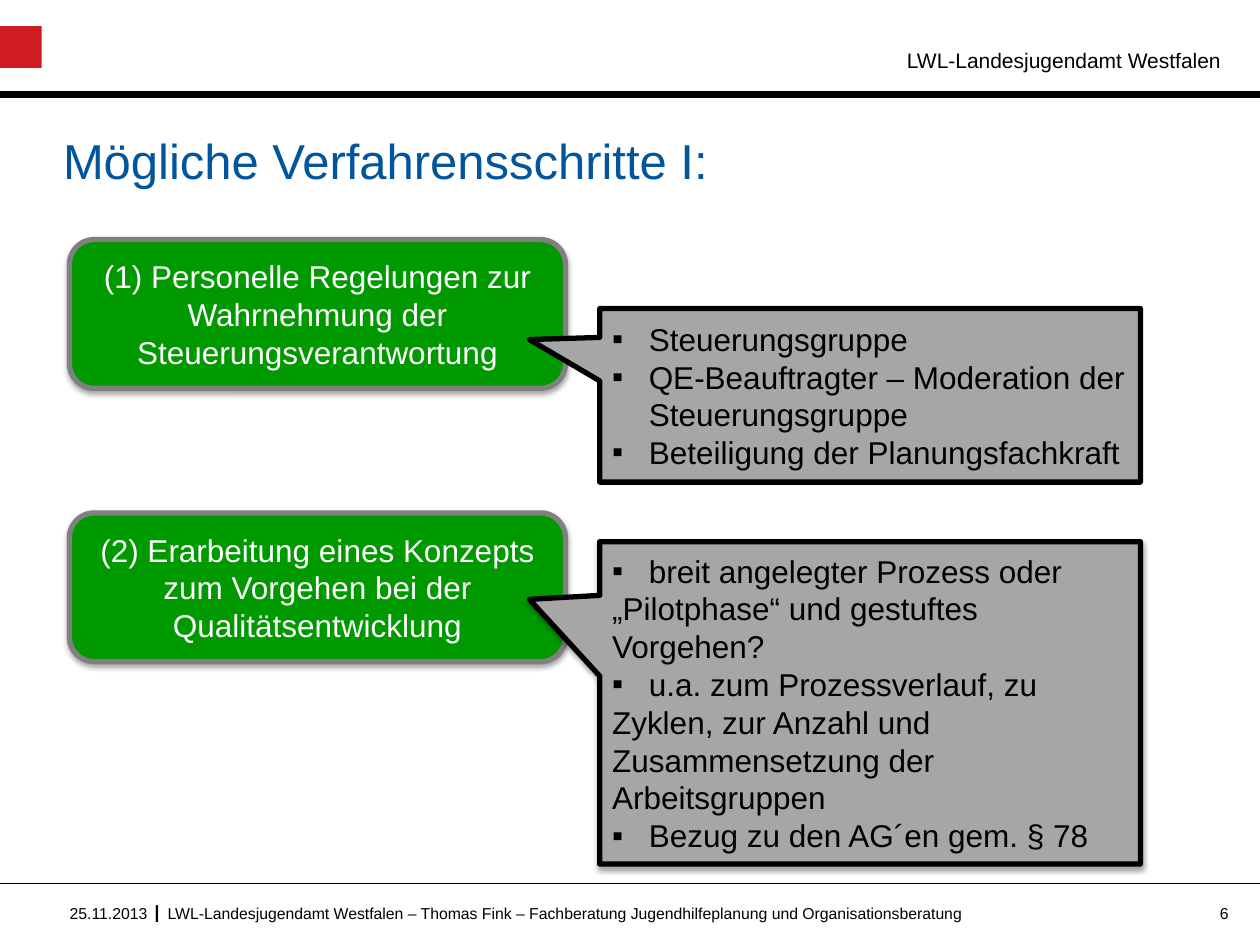
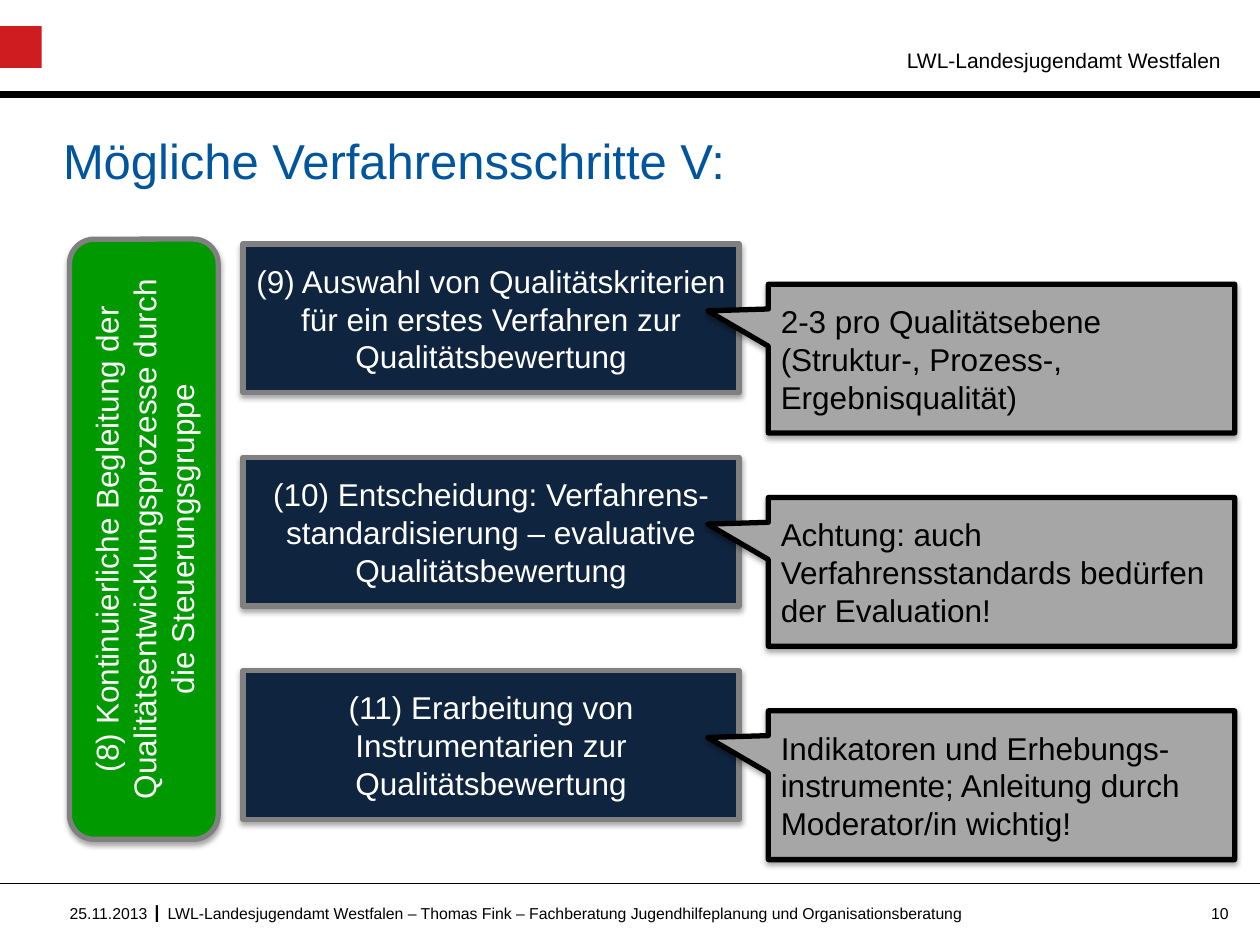
"""Build two slides on the possible steps of a quality development process."""
from lxml.etree import SubElement
from pptx import Presentation
from pptx.dml.color import RGBColor
from pptx.enum.shapes import MSO_CONNECTOR, MSO_SHAPE
from pptx.enum.text import MSO_ANCHOR, MSO_AUTO_SIZE, PP_ALIGN
from pptx.oxml.ns import qn
from pptx.util import Cm, Pt

FONT = "Arial"
BLACK, WHITE, RED, BLUE = "000000", "FFFFFF", "CF1C21", "00559D"
GREEN, NAVY, GREY, EDGE = "009900", "0F243E", "A6A6A6", "808080"
TAB = Cm(0.74)
STEP = 4.3
rgb = RGBColor.from_string


def write(sp, text, size=18, color=BLACK, align=PP_ALIGN.LEFT, anchor=MSO_ANCHOR.TOP,
          inset=None, spacing=None, bullet=False, hanging=False):
    """Fill a shape with one paragraph per line of text."""
    tf = sp.text_frame
    tf.word_wrap, tf.auto_size, tf.vertical_anchor = True, MSO_AUTO_SIZE.NONE, anchor
    if inset is not None:
        tf.margin_left = tf.margin_top = tf.margin_right = tf.margin_bottom = Cm(inset)
    for i, line in enumerate(text.split("\n")):
        p = tf.add_paragraph() if i else tf.paragraphs[0]
        if bullet:
            pPr = p._p.get_or_add_pPr()
            pPr.set("marL", str(TAB if hanging else 0))
            pPr.set("indent", str(-TAB if hanging else 0))
            SubElement(pPr, qn("a:buFont"), typeface=FONT)
            SubElement(pPr, qn("a:buChar"), char="▪")
            if not hanging:
                tabs = SubElement(pPr, qn("a:tabLst"))
                SubElement(tabs, qn("a:tab"), pos=str(TAB), algn="l")
                line = "\t" + line
        p.alignment = align
        if spacing:
            p.line_spacing = Pt(spacing)
        r = p.add_run()
        r.text = line
        r.font.name, r.font.size, r.font.color.rgb = FONT, Pt(size), rgb(color)


def add_box(s, kind, place, fill, edge=None, shadow=True):
    """Add a filled shape with an optional outline and soft shadow."""
    sp = s.shapes.add_shape(kind, *map(Cm, place))
    sp.fill.solid()
    sp.fill.fore_color.rgb = rgb(fill)
    if edge:
        sp.line.color.rgb, sp.line.width = rgb(edge), Pt(3)
    else:
        sp.line.fill.background()
    sp.shadow.inherit = False
    if shadow:
        effects = sp._element.spPr.find(qn("a:effectLst"))
        outer = SubElement(effects, qn("a:outerShdw"), blurRad=str(Pt(3.1)), dist=str(Pt(1.8)),
                           dir="5400000", rotWithShape="0")
        clr = SubElement(outer, qn("a:srgbClr"), val=BLACK)
        SubElement(clr, qn("a:alpha"), val="35000")
    if kind == MSO_SHAPE.RECTANGULAR_CALLOUT:
        sp.adjustments[0], sp.adjustments[1] = -0.63, -0.321
    return sp


prs = Presentation()
prs.slide_width, prs.slide_height = Cm(25.4), Cm(19.05)

slides = []
for title, number in [("Mögliche Verfahrensschritte I:", "6"),
                      ("Mögliche Verfahrensschritte V:", "10")]:
    s = prs.slides.add_slide(prs.slide_layouts[5])
    slides.append(s)
    for y, width in [(1.9, 4), (17.81, 0.5)]:
        rule = s.shapes.add_connector(MSO_CONNECTOR.STRAIGHT, 0, Cm(y), prs.slide_width, Cm(y))
        rule.line.color.rgb, rule.line.width = rgb(BLACK), Pt(width)
        SubElement(rule._element.spPr, qn("a:effectLst"))
    add_box(s, MSO_SHAPE.RECTANGLE, (0, 0.53, 0.84, 0.84), RED, shadow=False)

    sp = s.shapes.title
    sp.left, sp.top, sp.width, sp.height = map(Cm, (1.27, 2.69, 23.37, 2.59))
    write(sp, title, size=28, color=BLUE, inset=0, spacing=32)

    for text, place, size, align, inset in [
        ("LWL-Landesjugendamt Westfalen", (12.7, 0.84, 12.17, 0.76), 12, PP_ALIGN.RIGHT, None),
        ("25.11.2013", (1.07, 18.21, 1.9, 0.56), 9, PP_ALIGN.RIGHT, 0),
        ("I", (3.1, 18.11, 0.28, 0.61), 14, PP_ALIGN.LEFT, 0),
        ("LWL-Landesjugendamt Westfalen – Thomas Fink – "
         "Fachberatung Jugendhilfeplanung und Organisationsberatung",
         (3.38, 18.21, 18.42, 0.56), 9, PP_ALIGN.LEFT, 0),
        (number, (23.5, 18.21, 1.27, 0.56), 9, PP_ALIGN.RIGHT, 0),
    ]:
        sp = s.shapes.add_textbox(*map(Cm, place))
        write(sp, text, size=size, align=align, inset=inset)

step_format = dict(color=WHITE, align=PP_ALIGN.CENTER, anchor=MSO_ANCHOR.MIDDLE)

s = slides[0]
for step, top, note, note_top, note_height, hanging in [
    ("(1) Personelle Regelungen zur Wahrnehmung der Steuerungsverantwortung", 4.83,
     "Steuerungsgruppe\n"
     "QE-Beauftragter – Moderation der Steuerungsgruppe\n"
     "Beteiligung der Planungsfachkraft", 6.22, 3.5, True),
    ("(2) Erarbeitung eines Konzepts zum Vorgehen bei der Qualitätsentwicklung", 10.34,
     "breit angelegter Prozess oder „Pilotphase“ und gestuftes Vorgehen?\n"
     "u.a. zum Prozessverlauf, zu Zyklen, zur Anzahl und Zusammensetzung der Arbeitsgruppen\n"
     "Bezug zu den AG´en gem. § 78", 10.92, 6.5, False),
]:
    sp = add_box(s, MSO_SHAPE.ROUNDED_RECTANGLE, (1.4, top, 10, 3), GREEN, EDGE)
    write(sp, step, **step_format)
    sp = add_box(s, MSO_SHAPE.RECTANGULAR_CALLOUT, (12.09, note_top, 10.9, note_height),
                 GREY, BLACK, shadow=not hanging)
    write(sp, note, anchor=MSO_ANCHOR.MIDDLE, bullet=True, hanging=hanging)

s = slides[1]
sp = add_box(s, MSO_SHAPE.ROUNDED_RECTANGLE, (-3.15, 9.37, 12.1, 3), GREEN, EDGE)
sp.rotation = 270
write(sp, "(8) Kontinuierliche Begleitung der Qualitätsentwicklungsprozesse durch "
          "die Steuerungsgruppe", **step_format)
for i, (step, note) in enumerate([
    ("(9) Auswahl von Qualitätskriterien für ein erstes Verfahren zur Qualitätsbewertung",
     "2-3 pro Qualitätsebene (Struktur-, Prozess-, Ergebnisqualität)"),
    ("(10) Entscheidung: Verfahrens-standardisierung – evaluative Qualitätsbewertung",
     "Achtung: auch Verfahrensstandards bedürfen der Evaluation!"),
    ("(11) Erarbeitung von Instrumentarien zur Qualitätsbewertung",
     "Indikatoren und Erhebungs-instrumente; Anleitung durch Moderator/in wichtig!"),
]):
    sp = add_box(s, MSO_SHAPE.RECTANGLE, (4.9, 4.92 + i * STEP, 10, 3), NAVY, EDGE)
    write(sp, step, **step_format)
    sp = add_box(s, MSO_SHAPE.RECTANGULAR_CALLOUT, (15.49, 5.73 + i * STEP, 9.4, 3), GREY, BLACK)
    write(sp, note, anchor=MSO_ANCHOR.MIDDLE)

prs.save("out.pptx")
